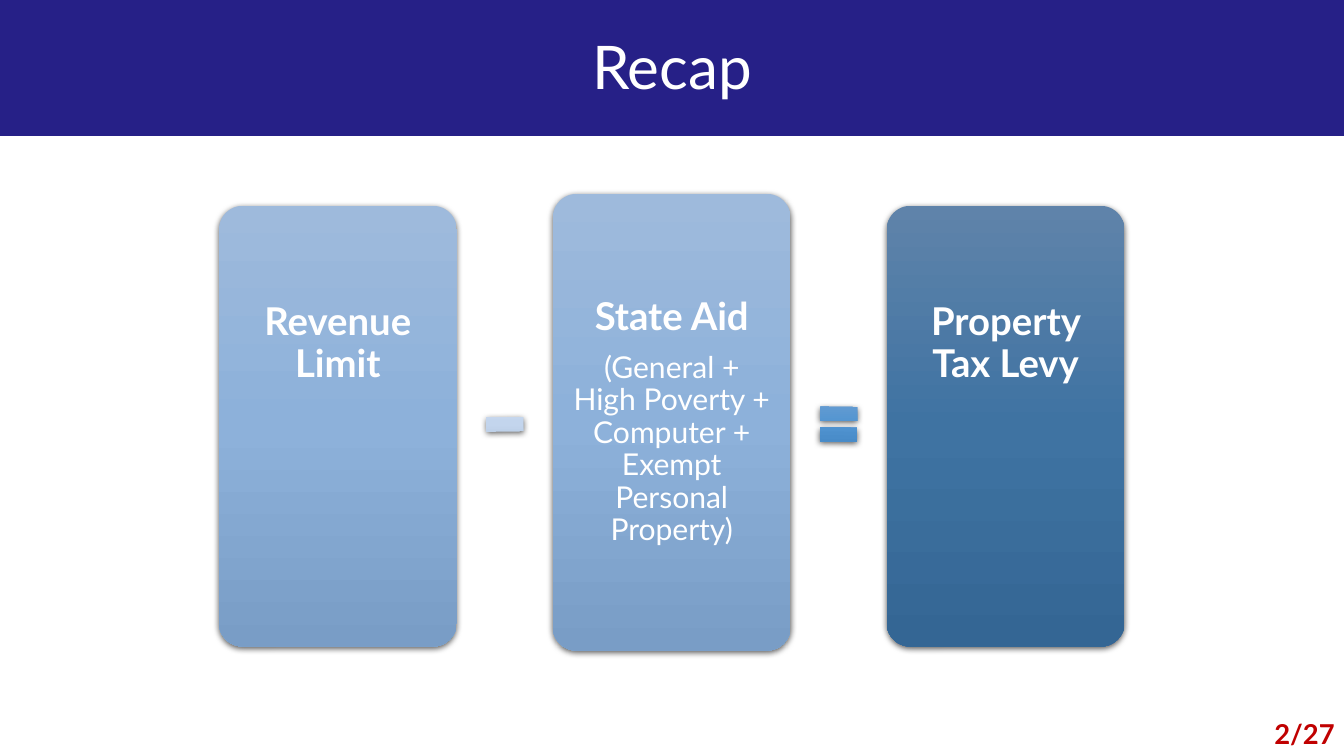
from lxml import etree
from pptx import Presentation, util as u
from pptx.dml.color import RGBColor
from pptx.enum import shapes, text
from pptx.oxml import ns

EMU_PER_PX = 914400 / 98.5
LIGHT = ("9EBADC", "8DB1DA", "799DC6")
DARK = ("5F83AA", "3F73A2", "346694")
PALE = ("CEDCEF", "C3D5ED", "AABDD6")
BRIGHT = ("6EA0D2", "5194D1", "4184C1")


def px(length):
    return u.Emu(round(length * EMU_PER_PX))


def color(value):
    return RGBColor.from_string(value)


def add_effect(properties, tag, **attributes):
    return etree.SubElement(properties, ns.qn(tag), attributes)


def add_shadow(properties, blur, distance, angle, alpha):
    effects = add_effect(properties, "a:effectLst")
    shadow = add_effect(effects, "a:outerShdw", blurRad=str(u.Pt(blur)),
                        dist=str(u.Pt(distance)), dir=str(angle * 60000),
                        algn="ctr", rotWithShape="0")
    tint = add_effect(shadow, "a:srgbClr", val="000000")
    add_effect(tint, "a:alpha", val=str(alpha * 1000))


def add_run(paragraph, words, size, ink="FFFFFF", bold=False):
    run = paragraph.add_run()
    run.text = words
    run.font.name = "Lato"
    run.font.size = u.Pt(size)
    run.font.bold = bold
    run.font.color.rgb = color(ink)
    return run


def add_label(slide, box, words, size, align, ink="FFFFFF", bold=False):
    label = slide.shapes.add_textbox(*map(px, box)).text_frame
    label.word_wrap = True
    label.vertical_anchor = text.MSO_ANCHOR.MIDDLE
    label.paragraphs[0].alignment = align
    return add_run(label.paragraphs[0], words, size, ink, bold)


def add_glossy(slide, kind, box, shades):
    glossy = slide.shapes.add_shape(kind, *map(px, box))
    glossy.line.fill.background()
    properties = glossy.fill._xPr
    gradient = etree.Element(ns.qn("a:gradFill"), rotWithShape="1")
    stops = add_effect(gradient, "a:gsLst")
    for index, shade in enumerate(shades):
        stop = add_effect(stops, "a:gs", pos=str(index * 50000))
        add_effect(stop, "a:srgbClr", val=shade)
    add_effect(gradient, "a:lin", ang="5400000", scaled="0")
    properties.find(ns.qn("a:prstGeom")).addnext(gradient)
    add_shadow(properties, 4.5, 1.5, 90, 63)
    return glossy


def add_card(slide, box, shades, heading, detail):
    card = add_glossy(slide, shapes.MSO_SHAPE.ROUNDED_RECTANGLE, box, shades)
    card.adjustments[0] = 0.1
    frame = card.text_frame
    frame.word_wrap = True
    frame.margin_left = frame.margin_right = px(12)
    frame.margin_top = frame.margin_bottom = px(12)
    frame.vertical_anchor = text.MSO_ANCHOR.MIDDLE
    if not detail:
        frame.vertical_anchor = text.MSO_ANCHOR.TOP
        frame.margin_top = px(90)
    title = frame.paragraphs[0]
    add_run(title, heading, 28, bold=True)
    if detail:
        title.space_after = u.Pt(9.8)
        add_run(frame.add_paragraph(), detail, 22)
    for paragraph in frame.paragraphs:
        paragraph.alignment = text.PP_ALIGN.CENTER
        paragraph.line_spacing = 0.9


def add_header(slide, box):
    banner = slide.shapes.add_shape(shapes.MSO_SHAPE.RECTANGLE, *map(px, box))
    banner.shadow.inherit = False
    banner.fill.solid()
    banner.fill.fore_color.rgb = color("262087")
    banner.line.fill.background()
    left, top, width, height = box
    title = add_label(slide, (left, top, width, height - 4), "Recap", 44,
                      text.PP_ALIGN.CENTER)
    properties = title.font._element
    add_shadow(properties, 3, 3, 45, 43)
    properties.find(ns.qn("a:solidFill")).addnext(
        properties.find(ns.qn("a:effectLst")))


def add_equation(slide, box):
    left, top, width, height = box
    card_width, operator_width, operator_height = 238, 50, 59
    pitch = (width - card_width) // 2
    gap = pitch - card_width
    terms = (
        ("Revenue Limit", "", LIGHT, 12),
        ("State Aid", "(General + High Poverty + Computer + Exempt Personal "
         "Property)", LIGHT, 0),
        ("Property Tax Levy", "", DARK, 12),
    )
    operators = ((shapes.MSO_SHAPE.MATH_MINUS, PALE, -0.6),
                 (shapes.MSO_SHAPE.MATH_EQUAL, BRIGHT, 0.6))
    for index, (heading, detail, shades, drop) in enumerate(terms):
        card_height = height - 16 if drop else height
        add_card(slide, (left + index * pitch, top + drop, card_width,
                         card_height), shades, heading, detail)
    for index, (kind, shades, tilt) in enumerate(operators):
        x = left + index * pitch + card_width + (gap - operator_width) // 2
        y = top + (height - operator_height) // 2 + 2
        operator = add_glossy(slide, kind, (x, y, operator_width,
                                            operator_height), shades)
        operator.rotation = tilt


def main():
    deck = Presentation()
    deck.slide_width, deck.slide_height = u.Inches(13.65), u.Inches(7.68)
    slide = deck.slides.add_slide(deck.slide_layouts[6])
    add_header(slide, (0, 0, 1345, 136))
    add_equation(slide, (219, 194, 906, 457))
    add_label(slide, (1247, 713, 98, 43), "2/27", 20, text.PP_ALIGN.RIGHT,
              "C00000", True)
    deck.save("out.pptx")


if __name__ == "__main__":
    main()
